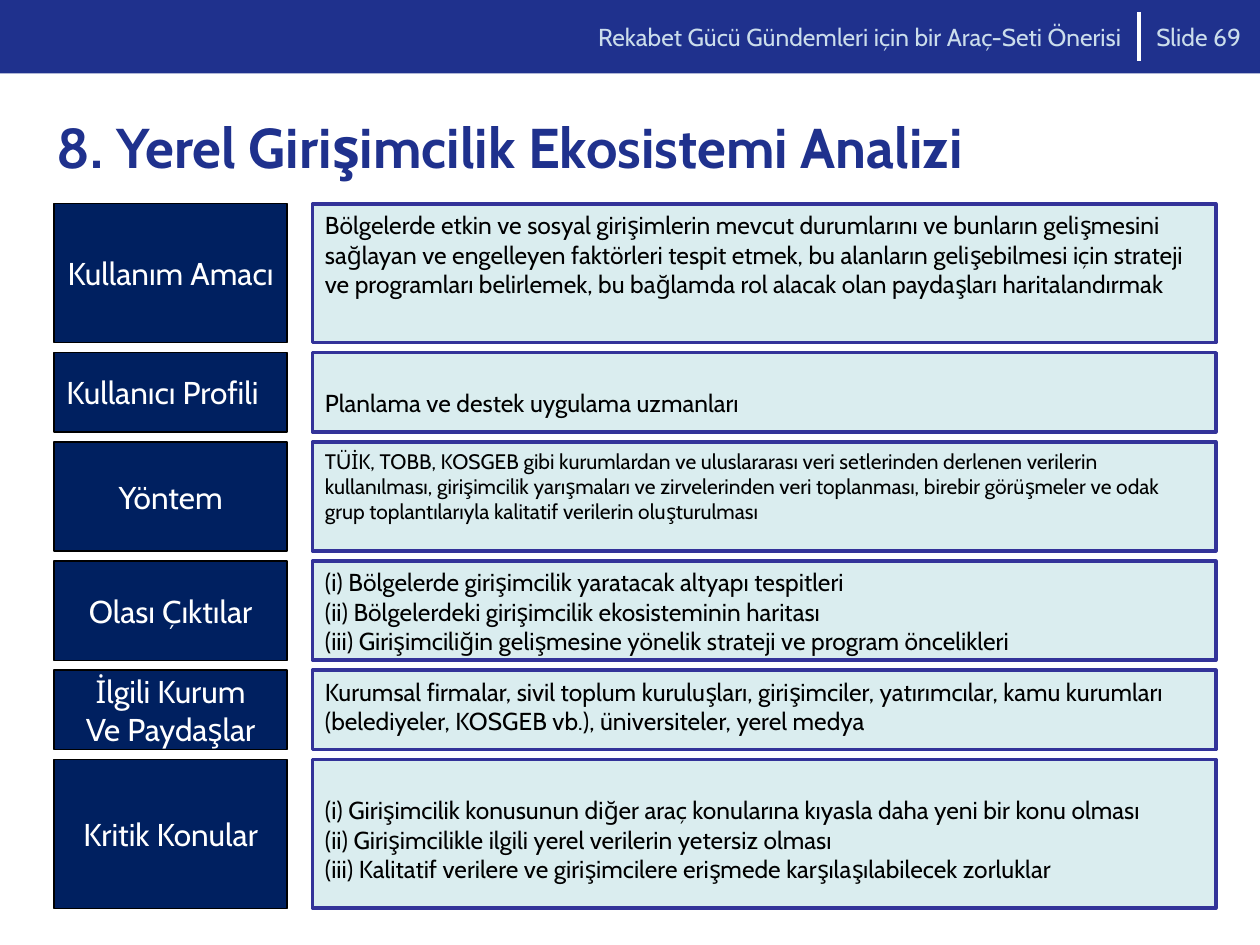
from pptx import Presentation
from pptx.dml.color import RGBColor
from pptx.enum.shapes import MSO_CONNECTOR, MSO_SHAPE
from pptx.enum.text import MSO_ANCHOR, PP_ALIGN
from pptx.oxml.ns import qn
from pptx.util import Cm, Pt

ROYAL = RGBColor(0x1F, 0x31, 0x8D)
NAVY = RGBColor(0x00, 0x20, 0x60)
INDIGO = RGBColor(0x33, 0x33, 0x99)
MINT = RGBColor(0xDA, 0xED, 0xEF)
PALE = RGBColor(0xCB, 0xDD, 0xEB)
WHITE = RGBColor(0xFF, 0xFF, 0xFF)
BLACK = RGBColor(0x00, 0x00, 0x00)

FONT = "Cabin"
SLIDE_WIDTH, SLIDE_HEIGHT = 25.4, 19.05
ROW_GAP = 0.2
LABEL_WIDTH, PANEL_OFFSET = 4.7, 5.21

MIDDLE_FRAME = {"word_wrap": True, "vertical_anchor": MSO_ANCHOR.MIDDLE}
LABEL_FRAME = {"word_wrap": False, "vertical_anchor": MSO_ANCHOR.MIDDLE}
PANEL_FRAME = {"word_wrap": True, "vertical_anchor": MSO_ANCHOR.TOP,
               "margin_right": Cm(0.46)}
PANEL_TOP_MARGIN, LOWERED_TOP_MARGIN = 0.13, 0.72

LEFT, CENTER, RIGHT = PP_ALIGN.LEFT, PP_ALIGN.CENTER, PP_ALIGN.RIGHT

# label, label alignment, row height, panel top margin, panel text size, panel lines
ROWS = [
    (["Kullanım Amacı"], CENTER, 2.8, PANEL_TOP_MARGIN, 14, [
        "Bölgelerde etkin ve sosyal girişimlerin mevcut durumlarını ve bunların "
        "gelişmesini sağlayan ve engelleyen faktörleri tespit etmek, bu alanların "
        "gelişebilmesi için strateji ve programları belirlemek, bu bağlamda rol "
        "alacak olan paydaşları haritalandırmak"]),
    (["Kullanıcı Profili"], LEFT, 1.6, LOWERED_TOP_MARGIN, 14, [
        "Planlama ve destek uygulama uzmanları"]),
    (["Yöntem"], CENTER, 2.2, PANEL_TOP_MARGIN, 12, [
        "TÜİK, TOBB, KOSGEB gibi kurumlardan ve uluslararası veri setlerinden "
        "derlenen verilerin kullanılması, girişimcilik yarışmaları ve zirvelerinden "
        "veri toplanması, birebir görüşmeler ve odak grup toplantılarıyla kalitatif "
        "verilerin oluşturulması"]),
    (["Olası Çıktılar"], CENTER, 2.0, PANEL_TOP_MARGIN, 14, [
        "(i) Bölgelerde girişimcilik yaratacak altyapı tespitleri",
        "(ii) Bölgelerdeki girişimcilik ekosisteminin haritası",
        "(iii) Girişimciliğin gelişmesine yönelik strateji ve program öncelikleri"]),
    (["İlgili Kurum", "Ve Paydaşlar"], CENTER, 1.6, PANEL_TOP_MARGIN, 14, [
        "Kurumsal firmalar, sivil toplum kuruluşları, girişimciler, yatırımcılar, "
        "kamu kurumları (belediyeler, KOSGEB vb.), üniversiteler, yerel medya"]),
    (["Kritik Konular"], CENTER, 3.0, LOWERED_TOP_MARGIN, 14, [
        "(i) Girişimcilik konusunun diğer araç konularına kıyasla daha yeni bir "
        "konu olması",
        "(ii) Girişimcilikle ilgili yerel verilerin yetersiz olması",
        "(iii) Kalitatif verilere ve girişimcilere erişmede karşılaşılabilecek "
        "zorluklar"]),
]


def apply_format(target, values):
    for attribute, value in values.items():
        setattr(target, attribute, value)


def write(frame, lines, frame_format, size, color, align=LEFT, bold=False):
    """Fill a text frame with one paragraph for each line."""
    apply_format(frame, frame_format)
    for number, line in enumerate(lines):
        paragraph = frame.add_paragraph() if number else frame.paragraphs[0]
        paragraph.alignment = align
        run = paragraph.add_run()
        run.text = line
        apply_format(run.font, {"name": FONT, "size": Pt(size), "bold": bold})
        run.font.color.rgb = color


def add_box(slide, left, top, width, height, fill, line=None, line_width=0.75):
    box = slide.shapes.add_shape(MSO_SHAPE.RECTANGLE, Cm(left), Cm(top),
                                 Cm(width), Cm(height))
    box.shadow.inherit = False
    box.fill.solid()
    box.fill.fore_color.rgb = fill
    if line is None:
        box.line.fill.background()
    else:
        box.line.color.rgb = line
        box.line.width = Pt(line_width)
    return box


def add_text(slide, left, top, width, height, text, size, color, **style):
    field = slide.shapes.add_textbox(Cm(left), Cm(top), Cm(width), Cm(height))
    write(field.text_frame, [text], MIDDLE_FRAME, size, color, **style)


def add_header(slide, left, top, width, height):
    add_box(slide, left, top, width, height, ROYAL)
    divider_x = left + width - 2.44
    divider = slide.shapes.add_connector(
        MSO_CONNECTOR.STRAIGHT, Cm(divider_x), Cm(top + 0.25),
        Cm(divider_x), Cm(top + height - 0.25))
    divider.line.color.rgb = WHITE
    divider.line.width = Pt(2.5)
    properties = divider._element.spPr
    properties.append(properties.makeelement(qn("a:effectLst"), {}))
    add_text(slide, divider_x - 17.68, top, 17.58, height,
             "Rekabet Gücü Gündemleri için bir Araç-Seti Önerisi",
             14, PALE, align=RIGHT)
    add_text(slide, divider_x + 0.1, top, 2.34, height, "Slide 69", 14, PALE)


def add_rows(slide, left, top, width):
    """Stack label and panel pairs downwards with an equal gap."""
    for label, align, height, top_margin, size, lines in ROWS:
        label_box = add_box(slide, left, top, LABEL_WIDTH, height, NAVY, BLACK)
        write(label_box.text_frame, label, LABEL_FRAME, 18, WHITE, align)
        panel = add_box(slide, left + PANEL_OFFSET, top, width - PANEL_OFFSET,
                        height, MINT, INDIGO, 2)
        panel_frame = PANEL_FRAME | {"margin_top": Cm(top_margin)}
        write(panel.text_frame, lines, panel_frame, size, BLACK)
        top += height + ROW_GAP


def main():
    presentation = Presentation()
    presentation.slide_width = Cm(SLIDE_WIDTH)
    presentation.slide_height = Cm(SLIDE_HEIGHT)
    slide = presentation.slides.add_slide(presentation.slide_layouts[6])
    add_header(slide, 0, 0, SLIDE_WIDTH, 1.48)
    add_text(slide, 0.9, 2.14, 23.7, 1.6,
             "8. Yerel Girişimcilik Ekosistemi Analizi", 32, ROYAL, bold=True)
    add_rows(slide, 1.09, 4.11, 23.42)
    presentation.save("out.pptx")


if __name__ == "__main__":
    main()
